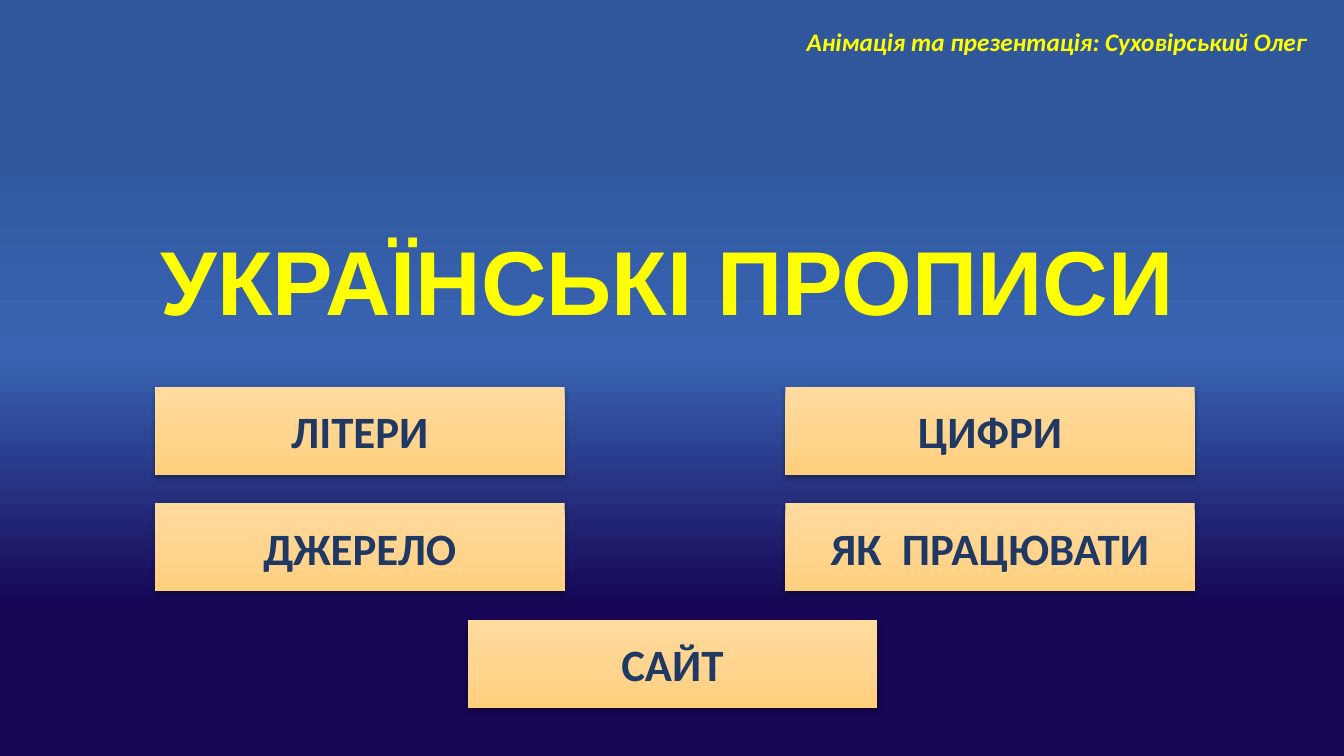
import copy

import pptx
import pptx.dml.color
import pptx.enum.shapes
import pptx.enum.text
import pptx.oxml
import pptx.oxml.ns
import pptx.util

Inches = pptx.util.Inches
RGBColor = pptx.dml.color.RGBColor
PP_ALIGN = pptx.enum.text.PP_ALIGN
ANCHOR = pptx.enum.text.MSO_ANCHOR

YELLOW = RGBColor(0xFF, 0xFF, 0x00)
NAVY = RGBColor(0x20, 0x38, 0x64)
SKY_STOPS = [
    (0.20, RGBColor(0x17, 0x06, 0x56)),
    (0.53, RGBColor(0x38, 0x64, 0xB3)),
    (0.82, RGBColor(0x30, 0x57, 0x9B)),
]
BUTTON_STOPS = [
    (0, RGBColor(0xFF, 0xDB, 0x9E)),
    (0.5, RGBColor(0xFF, 0xD5, 0x90)),
    (1, RGBColor(0xFF, 0xD0, 0x7C)),
]
SHADOW = (
    '<a:effectLst %s><a:outerShdw blurRad="44450" dist="27940" dir="5400000"'
    ' algn="ctr" rotWithShape="0"><a:srgbClr val="000000">'
    '<a:alpha val="32000"/></a:srgbClr></a:outerShdw></a:effectLst>'
) % pptx.oxml.ns.nsdecls("a")

BUTTON_W, BUTTON_H = 4.06, 0.87
LEFT, RIGHT, MIDDLE = 1.54, 7.79, 4.64
ROW_TOP, ROW_STEP = 3.84, 1.155
BUTTONS = [
    ("ЛІТЕРИ", LEFT, 0),
    ("ЦИФРИ", RIGHT, 0),
    ("ДЖЕРЕЛО", LEFT, 1),
    ("ЯК  ПРАЦЮВАТИ", RIGHT, 1),
    ("САЙТ", MIDDLE, 2),
]


def set_gradient(fill, element, stops, angle):
    """Fill with three stops; the angle runs counter-clockwise."""
    fill.gradient()
    fill.gradient_angle = angle
    stop_list = element.xpath(".//a:gsLst")[0]
    stop_list.append(copy.deepcopy(stop_list[-1]))
    for stop, (position, color) in zip(fill.gradient_stops, stops):
        stop.position = position
        stop.color.rgb = color


def set_text(s, text, size, font, color, align, anchor, italic=False):
    tf = s.text_frame
    tf.text = text
    tf.word_wrap = True
    tf.vertical_anchor = anchor
    p = tf.paragraphs[0]
    p.alignment = align
    r = p.runs[0]
    r.font.size = pptx.util.Pt(size)
    r.font.name = font
    r.font.bold = True
    r.font.italic = italic
    r.font.color.rgb = color
    return p


def add_title(slide, text):
    s = slide.shapes.title
    s.left, s.top = Inches(1.22), Inches(1.23)
    s.width, s.height = Inches(10.8), Inches(2.14)
    p = set_text(s, text, 64.8, "Arial", YELLOW, PP_ALIGN.CENTER, ANCHOR.BOTTOM)
    p.line_spacing = 0.9


def add_button(slide, text, left, row):
    s = slide.shapes.add_shape(
        pptx.enum.shapes.MSO_SHAPE.ACTION_BUTTON_CUSTOM,
        Inches(left), Inches(ROW_TOP + row * ROW_STEP),
        Inches(BUTTON_W), Inches(BUTTON_H))
    set_gradient(s.fill, s.element, BUTTON_STOPS, 270)
    s.line.fill.background()
    s.element.spPr.append(pptx.oxml.parse_xml(SHADOW))
    set_text(s, text, 32, "Calibri", NAVY, PP_ALIGN.CENTER, ANCHOR.MIDDLE)


def add_credit(slide, text):
    s = slide.shapes.add_textbox(
        Inches(7.79), Inches(0.21), Inches(5.27), Inches(0.4))
    set_text(s, text, 18, "Calibri", YELLOW, PP_ALIGN.RIGHT, ANCHOR.TOP,
             italic=True)


def main():
    prs = pptx.Presentation()
    prs.slide_width, prs.slide_height = Inches(13.33), Inches(7.5)
    slide = prs.slides.add_slide(prs.slide_layouts[5])

    # Background, dark at the bottom
    set_gradient(slide.background.fill, slide.element, SKY_STOPS, 90)

    # Title
    add_title(slide, "УКРАЇНСЬКІ ПРОПИСИ")

    # Menu buttons
    for text, left, row in BUTTONS:
        add_button(slide, text, left, row)

    # Author line
    add_credit(slide, "Анімація та презентація: Суховірський Олег")

    prs.save("out.pptx")


if __name__ == "__main__":
    main()
